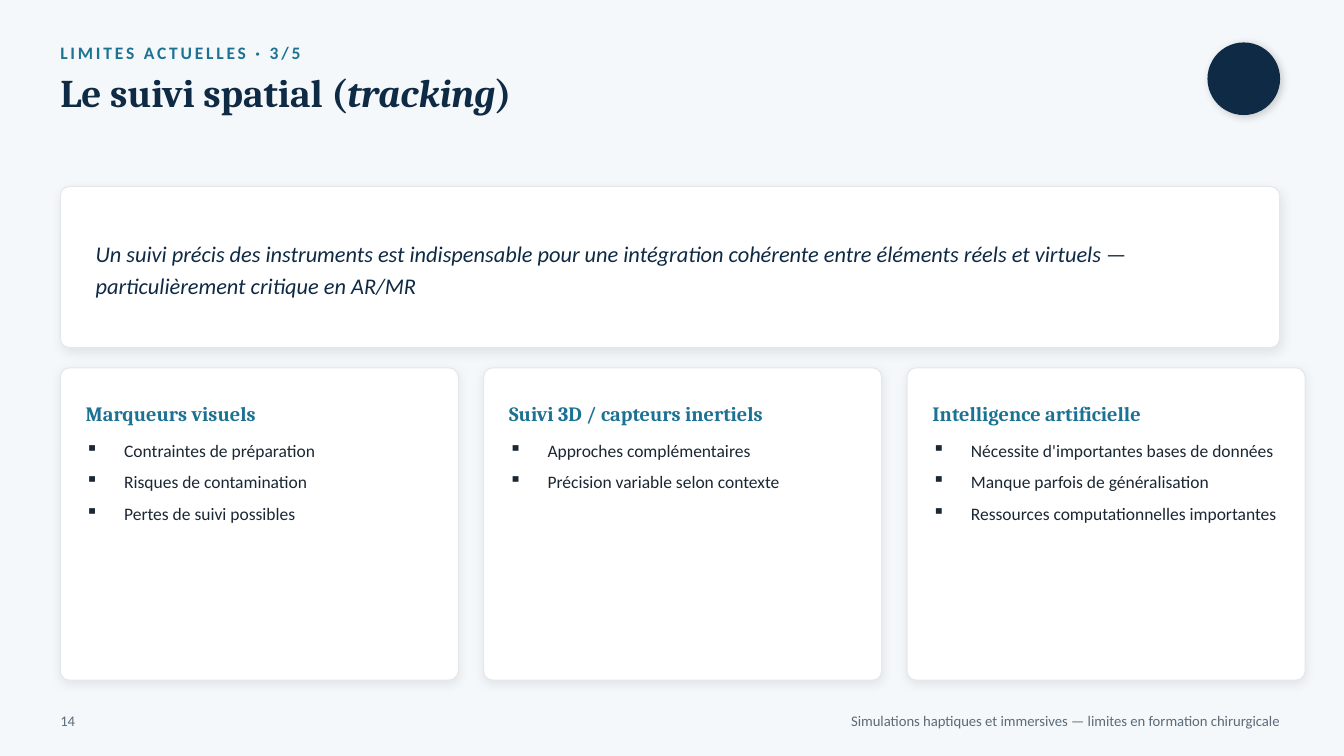
from lxml.etree import SubElement
from pptx import Presentation
from pptx.dml.color import RGBColor
from pptx.enum.shapes import MSO_SHAPE
from pptx.enum.text import MSO_ANCHOR, PP_ALIGN
from pptx.oxml.ns import qn
from pptx.util import Cm, Pt

# Content
KICKER = "LIMITES ACTUELLES · 3/5"
TITLE = [("Le suivi spatial (", False), ("tracking", True), (")", False)]
STATEMENT = (
    "Un suivi précis des instruments est indispensable pour une intégration "
    "cohérente entre éléments réels et virtuels — particulièrement critique en AR/MR"
)
CARDS = [
    ("Marqueurs visuels", [
        "Contraintes de préparation",
        "Risques de contamination",
        "Pertes de suivi possibles",
    ]),
    ("Suivi 3D / capteurs inertiels", [
        "Approches complémentaires",
        "Précision variable selon contexte",
    ]),
    ("Intelligence artificielle", [
        "Nécessite d'importantes bases de données",
        "Manque parfois de généralisation",
        "Ressources computationnelles importantes",
    ]),
]
PAGE_NUMBER = "14"
FOOTER = "Simulations haptiques et immersives — limites en formation chirurgicale"

# Style and layout, in centimetres
NAVY, TEAL, INK, GREY = "0F2A44", "1C7293", "1B2733", "5B6B79"
WHITE, BORDER, BACKGROUND = "FFFFFF", "E2E8EC", "F5F8FA"
BODY_FONT, HEADING_FONT = "Calibri", "Cambria"
MARGIN, CONTENT_WIDTH = 1.52, 30.73
CARD_TOP, CARD_WIDTH, CARD_HEIGHT, CARD_GAP = 9.27, 10.03, 7.87, 0.64
CARD_PADDING, CORNER_RADIUS, BULLET_INDENT = 0.64, 0.23, 0.97


def color(hex_code):
    return RGBColor.from_string(hex_code)


def add_shadow(shape, opacity, blur, distance, angle):
    shape.shadow.inherit = False
    effects = shape._element.spPr.find(qn("a:effectLst"))
    shadow = SubElement(effects, qn("a:outerShdw"), blurRad=str(Pt(blur)),
                        dist=str(Pt(distance)), dir=str(angle * 60000),
                        algn="bl", rotWithShape="0")
    tint = SubElement(shadow, qn("a:srgbClr"), val="000000")
    SubElement(tint, qn("a:alpha"), val=str(opacity * 1000))


def add_panel(left, top, width, height):
    panel = page.shapes.add_shape(MSO_SHAPE.ROUNDED_RECTANGLE,
                                  Cm(left), Cm(top), Cm(width), Cm(height))
    panel.adjustments[0] = CORNER_RADIUS / height
    panel.fill.solid()
    panel.fill.fore_color.rgb = color(WHITE)
    panel.line.color.rgb = color(BORDER)
    panel.line.width = Pt(0.75)
    add_shadow(panel, 8, 8, 2, 90)


def add_frame(left, top, width, height, anchor=MSO_ANCHOR.MIDDLE):
    box = page.shapes.add_textbox(Cm(left), Cm(top), Cm(width), Cm(height))
    frame = box.text_frame
    frame.word_wrap = True
    frame.vertical_anchor = anchor
    frame.margin_left = frame.margin_top = 0
    frame.margin_right = frame.margin_bottom = 0
    return frame


def add_span(para, text, size, ink, font=BODY_FONT, bold=False, italic=False):
    span = para.add_run()
    span.text = text
    span.font.size = Pt(size)
    span.font.name = font
    span.font.color.rgb = color(ink)
    span.font.bold = bold
    span.font.italic = italic
    return span


def add_bullets(frame, items):
    for index, item in enumerate(items):
        para = frame.add_paragraph() if index else frame.paragraphs[0]
        properties = para._p.get_or_add_pPr()
        properties.set("marL", str(Cm(BULLET_INDENT)))
        properties.set("indent", str(-Cm(BULLET_INDENT)))
        SubElement(properties, qn("a:buChar"), char="▪")
        para.line_spacing = 1.05
        para.space_after = Pt(7)
        add_span(para, item, 12.5, INK)


# Page
deck = Presentation()
deck.slide_width, deck.slide_height = Cm(33.87), Cm(19.05)
page = deck.slides.add_slide(deck.slide_layouts[6])
page.background.fill.solid()
page.background.fill.fore_color.rgb = color(BACKGROUND)

# Heading
kicker = add_frame(MARGIN, 0.89, 20.32, 0.89)
span = add_span(kicker.paragraphs[0], KICKER, 12.5, TEAL, bold=True)
span.font._element.set("spc", "200")
title = add_frame(MARGIN, 1.73, 26.92, 2.16, MSO_ANCHOR.TOP)
for text, italic in TITLE:
    add_span(title.paragraphs[0], text, 28, NAVY, HEADING_FONT, True, italic)

# Round badge
badge = page.shapes.add_shape(MSO_SHAPE.OVAL, Cm(30.43), Cm(1.07), Cm(1.83), Cm(1.83))
badge.fill.solid()
badge.fill.fore_color.rgb = color(NAVY)
badge.line.fill.background()
add_shadow(badge, 18, 6, 2, 45)

# Footer
number = add_frame(MARGIN, 17.78, 3.81, 0.76)
add_span(number.paragraphs[0], PAGE_NUMBER, 10.5, GREY)
footer = add_frame(7.62, 17.78, 24.64, 0.76)
footer.paragraphs[0].alignment = PP_ALIGN.RIGHT
add_span(footer.paragraphs[0], FOOTER, 10.5, GREY)

# Statement
add_panel(MARGIN, 4.7, CONTENT_WIDTH, 4.06)
statement = add_frame(2.41, 5.21, 28.96, 3.05)
statement.paragraphs[0].line_spacing = 1.2
add_span(statement.paragraphs[0], STATEMENT, 16, NAVY, italic=True)

# Cards
inner_width = CARD_WIDTH - 2 * CARD_PADDING
for column, (heading, items) in enumerate(CARDS):
    left = MARGIN + column * (CARD_WIDTH + CARD_GAP)
    add_panel(left, CARD_TOP, CARD_WIDTH, CARD_HEIGHT)
    header = add_frame(left + CARD_PADDING, CARD_TOP + 0.51, inner_width, 1.27)
    add_span(header.paragraphs[0], heading, 14.5, TEAL, HEADING_FONT, True)
    body = add_frame(left + CARD_PADDING, CARD_TOP + 1.78, inner_width, 5.84,
                     MSO_ANCHOR.TOP)
    add_bullets(body, items)

deck.save("out.pptx")
